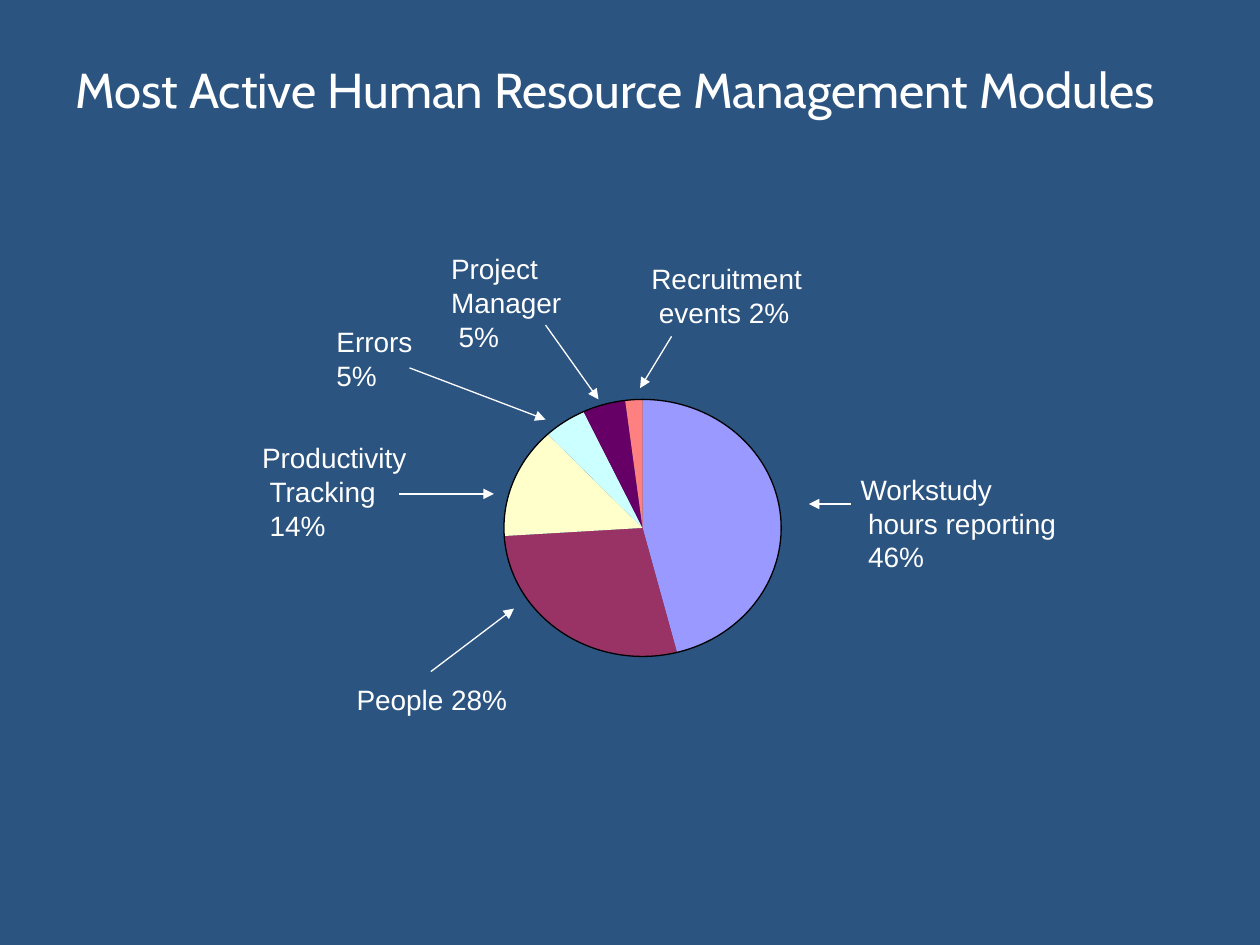
from math import cos, pi, sin
from lxml.etree import SubElement
from pptx import Presentation
from pptx.dml.color import RGBColor
from pptx.enum.shapes import MSO_CONNECTOR, MSO_SHAPE
from pptx.enum.text import MSO_AUTO_SIZE
from pptx.oxml.ns import qn
from pptx.util import Inches, Pt

COLORS = {
    "back": "2B5481",
    "text": "FFFFFF",
    "edge": "000000",
    "hours": "9999FF",
    "people": "993366",
    "track": "FFFFCC",
    "errors": "CCFFFF",
    "project": "660066",
    "recruit": "FF8080",
}

SHARES = [
    ("hours", 46),
    ("people", 28),
    ("track", 14),
    ("errors", 5),
    ("project", 5),
    ("recruit", 2),
]

LABELS = [
    (5.17, 2.08, 1.2, ["Recruitment", "events 2%"], 1),
    (3.58, 2, 0.88, ["Project", "Manager", "5%"], 2),
    (2.67, 2.58, 0.61, ["Errors", "5%"], 2),
    (2.08, 3.5, 1.15, ["Productivity", "Tracking", "14%"], 1),
    (2.83, 5.42, 1.2, ["People 28%"], 1),
    (6.83, 3.75, 1.75, ["Workstudy", "hours reporting", "46%"], 1),
]

ARROWS = [
    (3.42, 5.33, 4.08, 4.83),
    (6.75, 4, 6.42, 4),
    (5.33, 2.67, 5.08, 3.08),
    (4.33, 2.58, 4.75, 3.17),
    (3.25, 2.92, 4.33, 3.33),
    (3.17, 3.92, 3.92, 3.92),
]


class Deck:
    body = "Arial"
    head = "Cabin"
    indent = 0.06

    def __init__(self):
        self.prs = Presentation()
        self.prs.slide_width = Inches(10)
        self.prs.slide_height = Inches(7.5)
        self.slide = self.prs.slides.add_slide(self.prs.slide_layouts[6])
        self.shapes = self.slide.shapes
        self.paint(self.slide.background.fill, "back")

    def tint(self, name):
        return RGBColor.from_string(COLORS[name])

    def paint(self, fill, name):
        fill.solid()
        fill.fore_color.rgb = self.tint(name)

    def text(self, x, y, w, h, lines, font, size):
        box = self.shapes.add_textbox(Inches(x), Inches(y), Inches(w), Inches(h))
        frame = box.text_frame
        frame.word_wrap = False
        frame.auto_size = MSO_AUTO_SIZE.SHAPE_TO_FIT_TEXT
        frame.text = "\n".join(lines)
        for para in frame.paragraphs:
            for run in para.runs:
                run.font.name = font
                run.font.size = Pt(size)
                run.font.color.rgb = self.tint("text")
        return frame

    def title(self, x, y, w, h, words):
        self.text(x, y, w, h, [words], self.head, 28)

    def label(self, x, y, w, lines, first):
        frame = self.text(x, y, w, 0.27 * len(lines), lines, self.body, 16)
        frame.margin_left = frame.margin_right = 0
        frame.margin_top = frame.margin_bottom = 0
        for para in frame.paragraphs[first:]:
            para._p.get_or_add_pPr().set("marL", str(Inches(self.indent)))

    def slice(self, mid, radii, start, end, name):
        steps = max(4, round((end - start) * 100))
        turns = [2 * pi * (start + (end - start) * i / steps) for i in range(steps + 1)]
        points = [
            (Inches(mid[0] + radii[0] * sin(t)), Inches(mid[1] - radii[1] * cos(t)))
            for t in turns
        ]
        build = self.shapes.build_freeform(Inches(mid[0]), Inches(mid[1]))
        build.add_line_segments(points, close=True)
        wedge = build.convert_to_shape()
        wedge.shadow.inherit = False
        self.paint(wedge.fill, name)
        wedge.line.fill.background()

    def pie(self, mid, radii, shares):
        total = sum(share for name, share in shares)
        start = 0
        for name, share in shares:
            end = start + share / total
            self.slice(mid, radii, start, end, name)
            start = end
        rim = self.shapes.add_shape(
            MSO_SHAPE.OVAL,
            Inches(mid[0] - radii[0]),
            Inches(mid[1] - radii[1]),
            Inches(2 * radii[0]),
            Inches(2 * radii[1]),
        )
        rim.shadow.inherit = False
        rim.fill.background()
        rim.line.color.rgb = self.tint("edge")
        rim.line.width = Pt(0.75)

    def arrow(self, *ends):
        link = self.shapes.add_connector(
            MSO_CONNECTOR.STRAIGHT, *[Inches(end) for end in ends]
        )
        link.line.color.rgb = self.tint("text")
        link.line.width = Pt(0.75)
        SubElement(link.line._get_or_add_ln(), qn("a:tailEnd"), type="triangle")
        SubElement(link._element.spPr, qn("a:effectLst"))

    def save(self):
        self.prs.save("out.pptx")


def main():
    deck = Deck()
    for label in LABELS:
        deck.label(*label)
    deck.pie((5.1, 4.19), (1.1, 1.02), SHARES)
    deck.title(0.5, 0.42, 9.17, 0.57, "Most Active Human Resource Management Modules")
    for arrow in ARROWS:
        deck.arrow(*arrow)
    deck.save()


if __name__ == "__main__":
    main()
